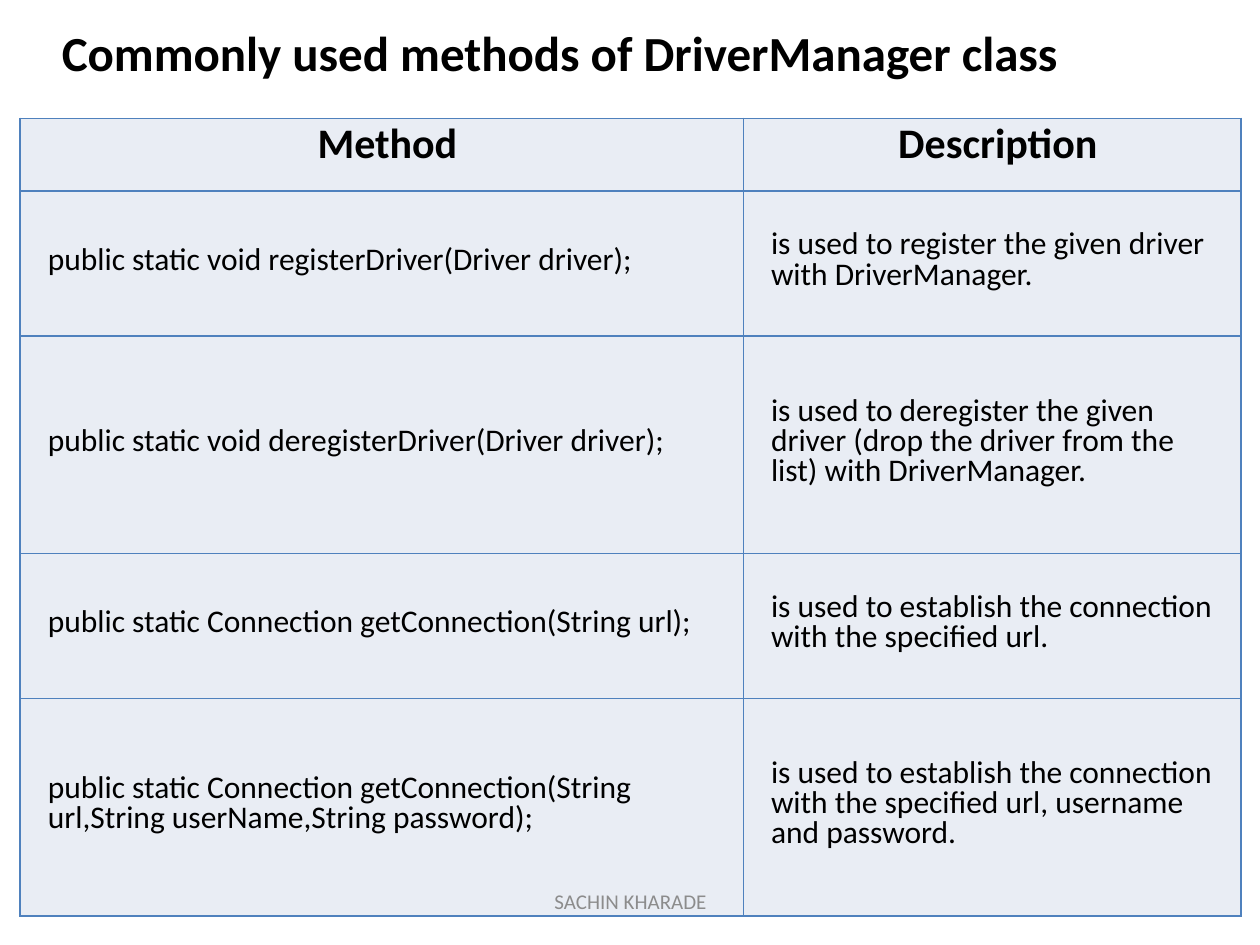
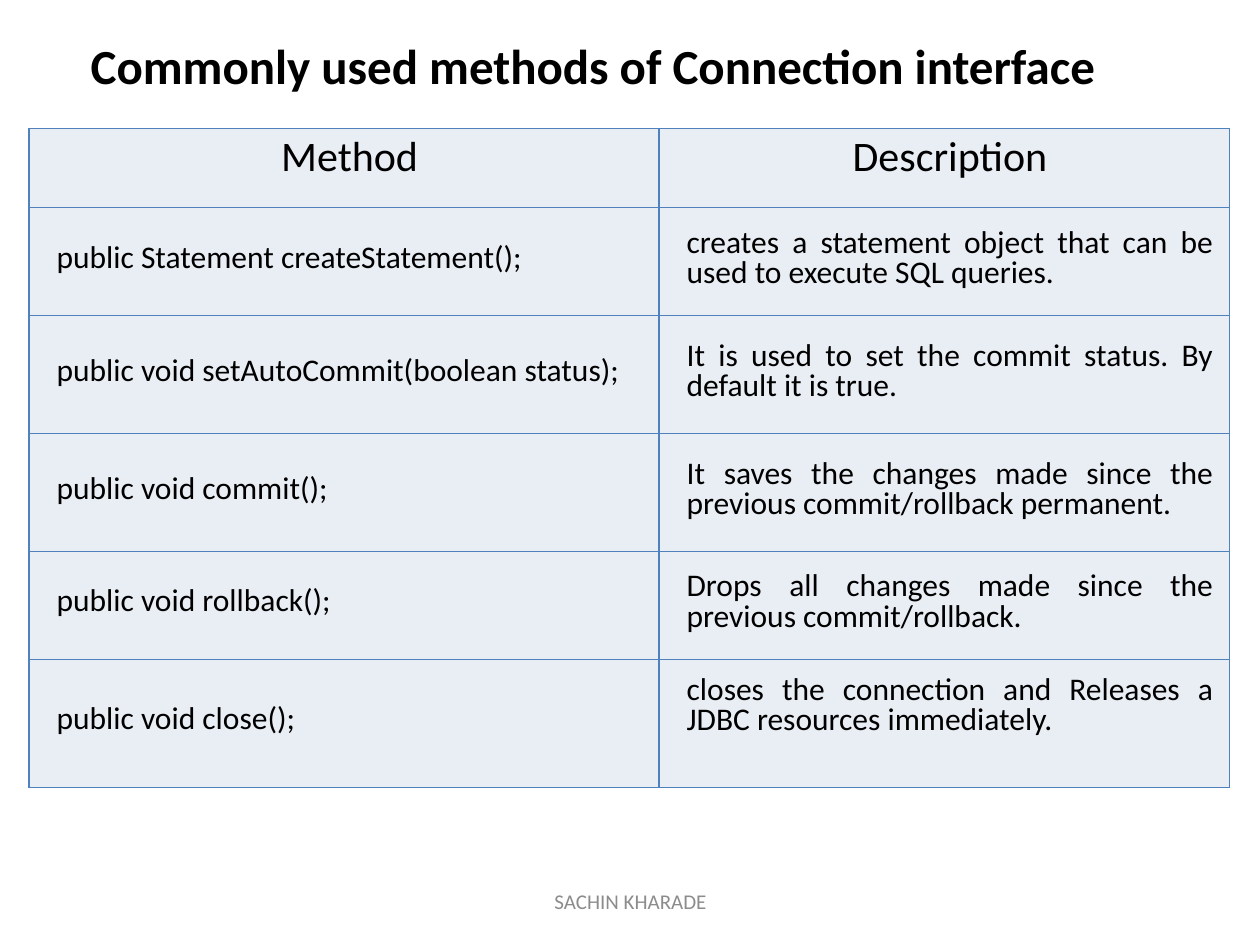
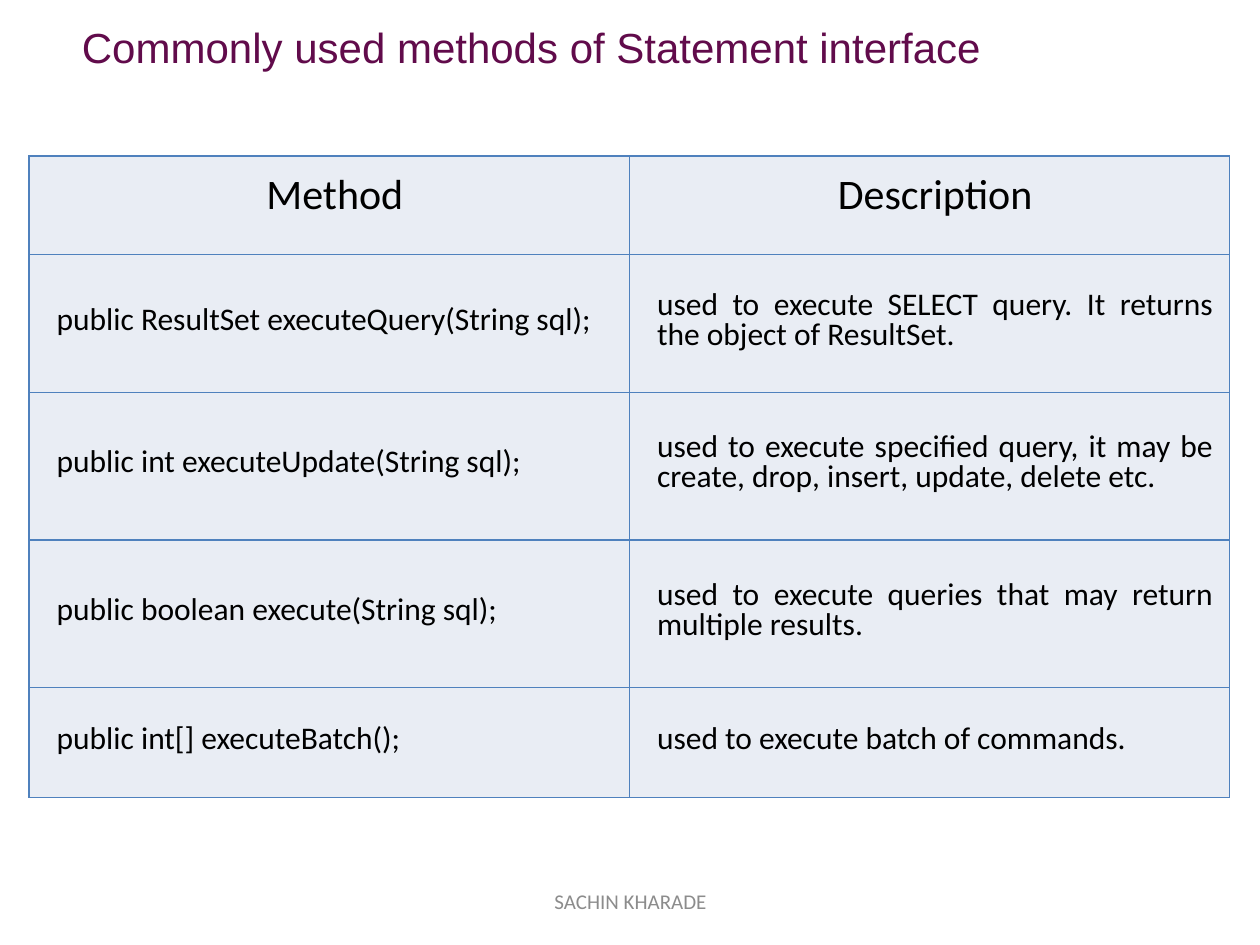
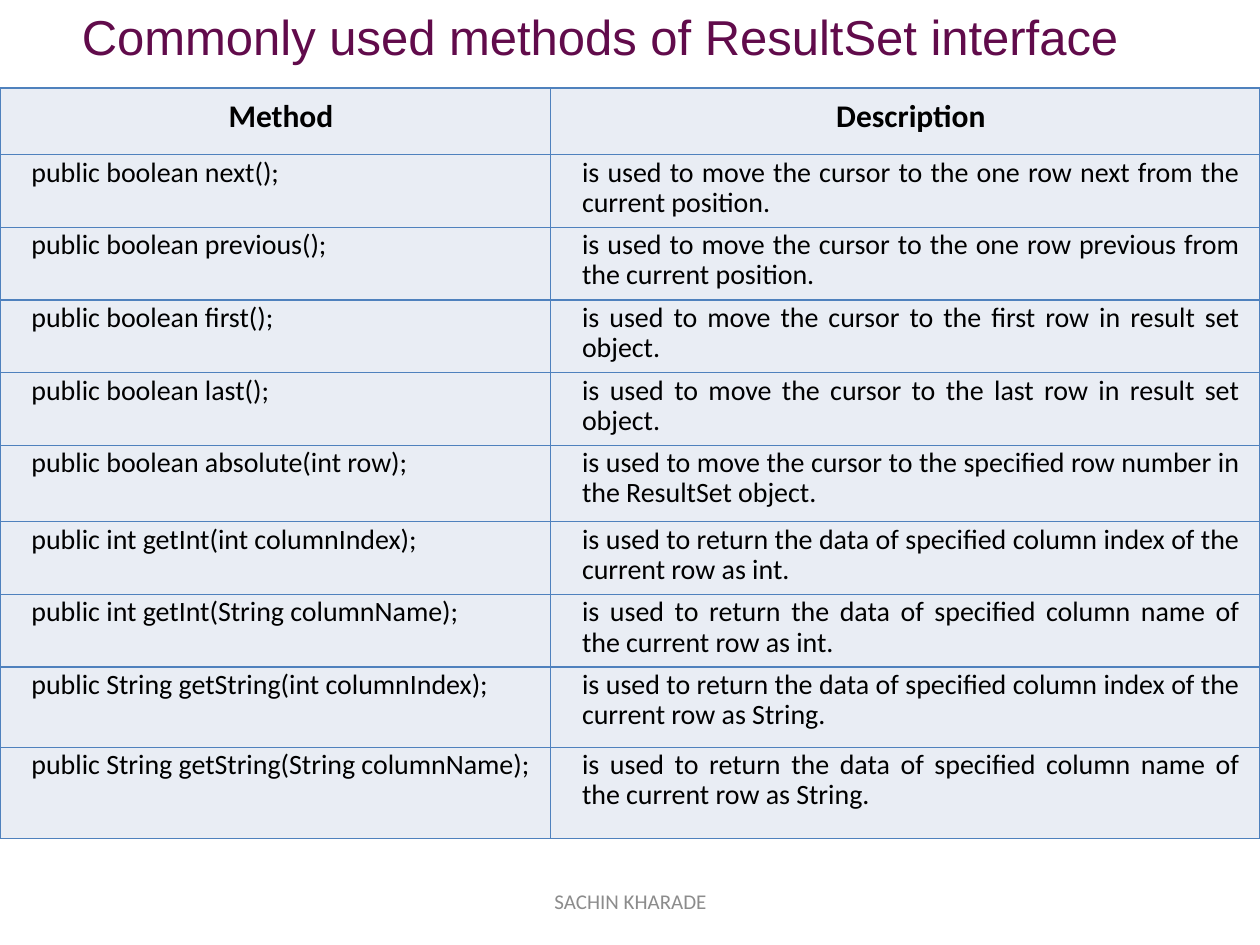
"""Build four slides of method reference tables for the JDBC classes."""
from dataclasses import dataclass

from lxml import etree
from pptx import Presentation
from pptx.dml.color import RGBColor
from pptx.enum.text import MSO_ANCHOR, MSO_AUTO_SIZE, PP_ALIGN
from pptx.oxml.ns import qn
from pptx.util import Inches, Pt

LEFT, CENTER, JUSTIFY = PP_ALIGN.LEFT, PP_ALIGN.CENTER, PP_ALIGN.JUSTIFY
TOP, MIDDLE = MSO_ANCHOR.TOP, MSO_ANCHOR.MIDDLE
GROW = MSO_AUTO_SIZE.SHAPE_TO_FIT_TEXT
SLIDE_WIDTH, SLIDE_HEIGHT = Inches(10), Inches(7.5)
TITLE_ONLY = 5
HEADINGS = ("Method", "Description")


@dataclass(frozen=True)
class Theme:
    """Colours, fonts, sizes and spacing of the whole deck."""
    black: str = "000000"
    plum: str = "610B4B"
    white: str = "FFFFFF"
    cell: str = "E9EDF4"
    border: str = "4F81BD"
    footer: str = "8C8C8C"
    body_font: str = "Calibri"
    plain_font: str = "Arial"
    title_size: int = 28
    heading_size: int = 24
    cell_size: int = 18
    small_size: int = 16
    footer_size: int = 12
    border_width: float = 1
    line_spacing: float = 17.2
    left_indent: float = 0.21
    right_indent: float = 0.12
    tight_inset: float = 0.01
    loose_inset: float = 0.04


THEME = Theme()


@dataclass(frozen=True)
class TableStyle:
    """Text settings that differ from table to table."""
    heading_size: int = THEME.heading_size
    heading_bold: bool = False
    cell_size: int = THEME.cell_size
    method_align: PP_ALIGN = JUSTIFY
    description_align: PP_ALIGN = JUSTIFY
    anchor: MSO_ANCHOR = MIDDLE
    inset: float = THEME.tight_inset


def box(left, top, width, height):
    """Turn percentages of the slide into a left, top, width, height tuple."""
    return (round(SLIDE_WIDTH * left / 100), round(SLIDE_HEIGHT * top / 100),
            round(SLIDE_WIDTH * width / 100), round(SLIDE_HEIGHT * height / 100))


def place(shape, area):
    """Move and size a shape."""
    shape.left, shape.top, shape.width, shape.height = area


def format_paragraph(paragraph, size, color, font=THEME.body_font, bold=False, align=LEFT):
    """Set the alignment of a paragraph and the font of its runs."""
    paragraph.alignment = align
    for run in paragraph.runs:
        run.font.name = font
        run.font.size = Pt(size)
        run.font.bold = bold
        run.font.color.rgb = RGBColor.from_string(color)


def add_title(slide, text, area, anchor=TOP, fill=None, **style):
    """Fill and position the title placeholder."""
    title = slide.shapes.title
    place(title, area)
    frame = title.text_frame
    frame.text = text
    frame.word_wrap = True
    frame.auto_size = GROW
    frame.vertical_anchor = anchor
    if fill:
        title.fill.solid()
        title.fill.fore_color.rgb = RGBColor.from_string(fill)
    format_paragraph(frame.paragraphs[0], **style)


def add_footer(slide):
    """Add the author line at the bottom of a slide, in front of its table."""
    frame = slide.shapes.add_textbox(*box(34.2, 92.67, 31.7, 5.33)).text_frame
    frame.text = "SACHIN KHARADE"
    frame.word_wrap = True
    frame.vertical_anchor = MIDDLE
    format_paragraph(frame.paragraphs[0], THEME.footer_size, THEME.footer, align=CENTER)


def add_borders(cell):
    """Draw a line on all four sides of a cell."""
    properties = cell._tc.get_or_add_tcPr()
    for side in ("lnL", "lnR", "lnT", "lnB"):
        line = etree.SubElement(properties, qn(f"a:{side}"), w=str(Pt(THEME.border_width)))
        fill = etree.SubElement(line, qn("a:solidFill"))
        etree.SubElement(fill, qn("a:srgbClr"), val=THEME.border)


def fill_cell(cell, text, size, align, anchor, inset, bold=False):
    """Write and format one table cell."""
    add_borders(cell)
    cell.fill.solid()
    cell.fill.fore_color.rgb = RGBColor.from_string(THEME.cell)
    cell.vertical_anchor = anchor
    cell.margin_left = cell.margin_right = Inches(inset)
    cell.margin_top = cell.margin_bottom = Inches(inset)
    cell.text_frame.text = text
    paragraph = cell.text_frame.paragraphs[0]
    paragraph.line_spacing = Pt(THEME.line_spacing)
    properties = paragraph._p.get_or_add_pPr()
    properties.set("marL", str(Inches(THEME.left_indent)))
    properties.set("marR", str(Inches(THEME.right_indent)))
    properties.set("indent", "0")
    format_paragraph(paragraph, size, THEME.black, bold=bold, align=align)


def share_out(lines, total, weights):
    """Divide a length among columns or rows in proportion to weights."""
    return [(line, round(total * weight / sum(weights))) for line, weight in zip(lines, weights)]


def add_method_table(slide, area, column_weights, row_weights, methods, style):
    """Add a table of methods and descriptions under a heading row."""
    table = slide.shapes.add_table(len(methods) + 1, len(HEADINGS), *area).table
    table.first_row = table.horz_banding = False
    for column, width in share_out(table.columns, area[2], column_weights):
        column.width = width
    for row, height in share_out(table.rows, area[3], row_weights):
        row.height = height
    for index, heading in enumerate(HEADINGS):
        fill_cell(table.cell(0, index), heading, style.heading_size, CENTER,
                  MIDDLE, THEME.tight_inset, style.heading_bold)
    aligns = (style.method_align, style.description_align)
    for row_index, texts in enumerate(methods, start=1):
        for index, (text, align) in enumerate(zip(texts, aligns)):
            fill_cell(table.cell(row_index, index), text, style.cell_size, align,
                      style.anchor, style.inset)
    return table


def build_driver_manager(slide):
    """Build the DriverManager slide."""
    add_title(slide, "Commonly used methods of DriverManager class", box(3.9, 1.73, 87.5, 7.6),
              size=THEME.title_size, color=THEME.black, bold=True)
    methods = [
        ("public static void registerDriver(Driver driver);",
         "is used to register the given driver with DriverManager."),
        ("public static void deregisterDriver(Driver driver);",
         "is used to deregister the given driver (drop the driver from the list) "
         "with DriverManager."),
        ("public static Connection getConnection(String url);",
         "is used to establish the connection with the specified url."),
        ("public static Connection getConnection(String url,String userName,String password);",
         "is used to establish the connection with the specified url, username and password."),
    ]
    style = TableStyle(heading_bold=True, method_align=LEFT, description_align=LEFT)
    add_method_table(slide, box(1.6, 12.53, 96.9, 84.4), (5.74, 3.95), (1, 2, 3, 2, 3),
                     methods, style)


def build_connection(slide):
    """Build the Connection slide."""
    add_title(slide, "Commonly used methods of Connection interface", box(6.2, 3.07, 86.7, 7.6),
              size=THEME.title_size, color=THEME.black, bold=True)
    methods = [
        ("public Statement createStatement();",
         "creates a statement object that can be used to execute SQL queries."),
        ("public void setAutoCommit(boolean status);",
         "It is used to set the commit status. By default it is true."),
        ("public void commit();",
         "It saves the changes made since the previous commit/rollback permanent."),
        ("public void rollback();",
         "Drops all changes made since the previous commit/rollback."),
        ("public void close();",
         "closes the connection and Releases a JDBC resources immediately."),
    ]
    table = add_method_table(slide, box(2.3, 13.6, 95.3, 69.73), (5, 4.53),
                             (0.63, 0.86, 0.94, 0.94, 0.86, 1.02), methods,
                             TableStyle(method_align=LEFT))
    table.cell(len(methods), 1).margin_bottom = Pt(THEME.line_spacing)


def build_statement(slide):
    """Build the Statement slide."""
    add_title(slide, "Commonly used methods of Statement interface", box(5.5, 1.6, 89.8, 6.67),
              MIDDLE, size=THEME.heading_size, color=THEME.plum, font=THEME.plain_font)
    methods = [
        ("public ResultSet executeQuery(String sql);",
         "used to execute SELECT query. It returns the object of ResultSet."),
        ("public int executeUpdate(String sql);",
         "used to execute specified query, it may be create, drop, insert, update, delete etc."),
        ("public boolean execute(String sql);",
         "used to execute queries that may return multiple results."),
        ("public int[] executeBatch();",
         "used to execute batch of commands."),
    ]
    add_method_table(slide, box(2.3, 16.53, 95.3, 67.87), (1, 1),
                     (0.78, 1.09, 1.17, 1.17, 0.87), methods, TableStyle())


def build_result_set(slide):
    """Build the ResultSet slide."""
    add_title(slide, "Commonly used methods of ResultSet interface", box(5.5, 0, 89.8, 7.6),
              MIDDLE, THEME.white, size=THEME.title_size, color=THEME.plum,
              font=THEME.plain_font)
    moves = [
        ("next()", "one row next from the current position."),
        ("previous()", "one row previous from the current position."),
        ("first()", "first row in result set object."),
        ("last()", "last row in result set object."),
        ("absolute(int row)", "specified row number in the ResultSet object."),
    ]
    methods = [(f"public boolean {call};", f"is used to move the cursor to the {target}")
               for call, target in moves]
    methods += [(f"public {kind} get{kind.capitalize()}({argument});",
                 f"is used to return the data of specified column {key} "
                 f"of the current row as {kind}.")
                for kind in ("int", "String")
                for argument, key in (("int columnIndex", "index"), ("String columnName", "name"))]
    style = TableStyle(heading_size=THEME.cell_size, heading_bold=True,
                       cell_size=THEME.small_size, anchor=TOP, inset=THEME.loose_inset)
    add_method_table(slide, box(0, 9.33, 100, 79.47), (4.37, 5.63),
                     (0.53, 0.58, 0.58, 0.58, 0.58, 0.61, 0.58, 0.58, 0.64, 0.73),
                     methods, style)


def main():
    """Build and save the presentation."""
    presentation = Presentation()
    presentation.slide_width, presentation.slide_height = SLIDE_WIDTH, SLIDE_HEIGHT
    for build in (build_driver_manager, build_connection, build_statement, build_result_set):
        slide = presentation.slides.add_slide(presentation.slide_layouts[TITLE_ONLY])
        build(slide)
        add_footer(slide)
    presentation.save("out.pptx")


if __name__ == "__main__":
    main()
